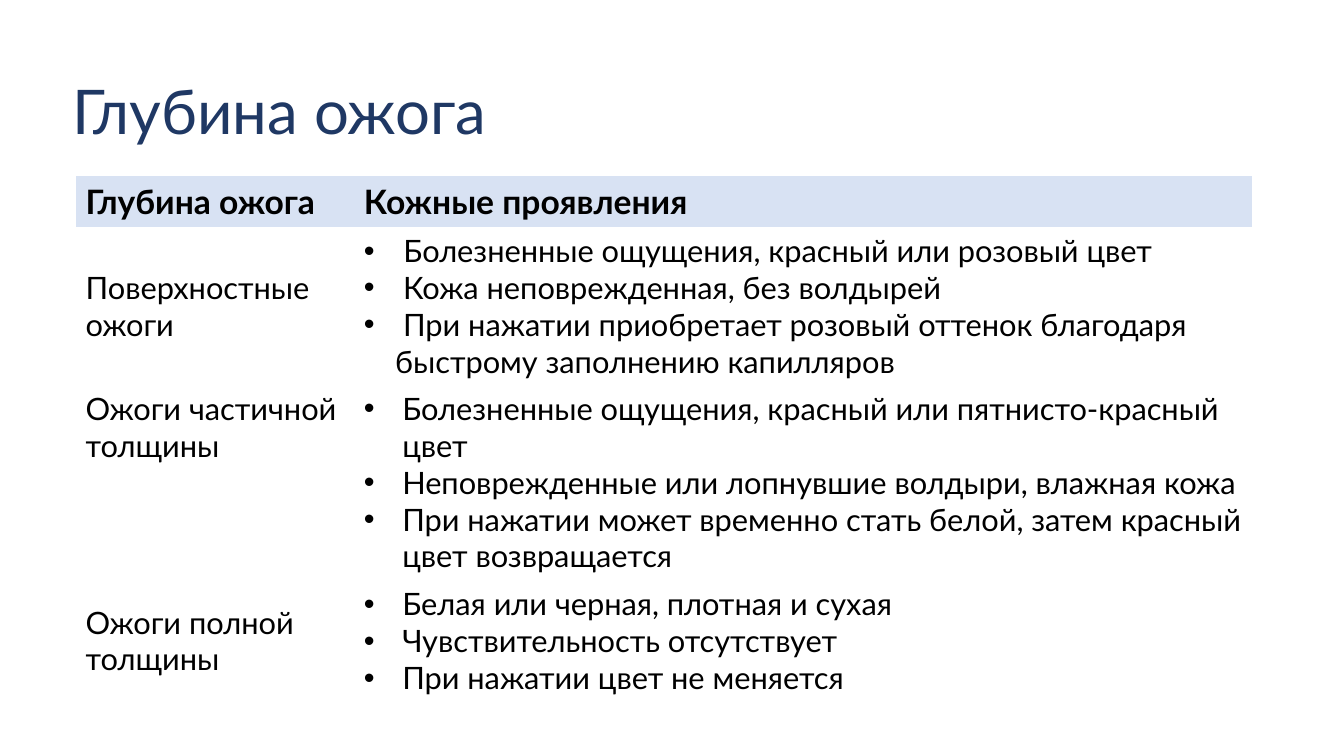
from lxml import etree
from pptx import Presentation
from pptx.dml.color import RGBColor
from pptx.enum.text import MSO_ANCHOR, PP_ALIGN
from pptx.oxml.ns import qn
from pptx.util import Inches, Pt

NAVY = RGBColor(0x1F, 0x38, 0x64)
BLACK = RGBColor(0x00, 0x00, 0x00)
PALE_BLUE = RGBColor(0xD8, 0xE2, 0xF3)
TOP, MIDDLE = MSO_ANCHOR.TOP, MSO_ANCHOR.MIDDLE
LEFT = PP_ALIGN.LEFT
FONT = "Lato"
NO_STYLE = "{2D5ABB26-0587-4C30-8999-92F81FD0307C}"

HEADERS = ["Глубина ожога", "Кожные проявления"]
BURNS = [
    ("Поверхностные ожоги", MIDDLE, [
        ("Болезненные ощущения, красный или розовый цвет", 0.39),
        (" Кожа неповрежденная, без волдырей", 0.31),
        (" При нажатии приобретает розовый оттенок благодаря быстрому заполнению капилляров", 0.31),
    ]),
    ("Ожоги частичной толщины", TOP, [
        ("Болезненные ощущения, красный или пятнисто-красный цвет", 0.38),
        ("Неповрежденные или лопнувшие волдыри, влажная кожа ", 0.38),
        ("При нажатии может временно стать белой, затем красный цвет возвращается", 0.38),
    ]),
    ("Ожоги полной толщины", MIDDLE, [
        ("Белая или черная, плотная и сухая", 0.38),
        ("Чувствительность отсутствует", 0.38),
        ("При нажатии цвет не меняется", 0.38),
    ]),
]


def write(p, text, size=22, color=BLACK, bold=False, indent=None):
    p.alignment = LEFT
    if indent:
        pPr = p._p.get_or_add_pPr()
        pPr.set("marL", str(Inches(indent)))
        pPr.set("indent", str(-Inches(indent)))
        etree.SubElement(pPr, qn("a:buFont")).set("typeface", "Arial")
        etree.SubElement(pPr, qn("a:buChar")).set("char", "•")
    r = p.add_run()
    r.text = text
    r.font.name = FONT
    r.font.size = Pt(size)
    r.font.bold = bold
    r.font.color.rgb = color


prs = Presentation()
prs.slide_width, prs.slide_height = Inches(13.33), Inches(7.5)
s = prs.slides.add_slide(prs.slide_layouts[5])

title = s.shapes.title
title.left, title.top = Inches(0.62), Inches(0.41)
title.width, title.height = Inches(11.5), Inches(1.45)
tf = title.text_frame
tf.vertical_anchor = MIDDLE
tf.paragraphs[0].line_spacing = 0.9
write(tf.paragraphs[0], "Глубина ожога", size=44, color=NAVY)

frame = s.shapes.add_table(4, 2, Inches(0.75), Inches(1.75), Inches(11.67), Inches(3.8))
table = frame.table
table.horz_banding = False
table._tbl.tblPr.find(qn("a:tableStyleId")).text = NO_STYLE
for col, width in zip(table.columns, [2.76, 8.91]):
    col.width = Inches(width)
for row, height in zip(table.rows, [0.38, 0.99, 1.22, 1.21]):
    row.height = Inches(height)

for col, header in enumerate(HEADERS):
    cell = table.cell(0, col)
    cell.fill.solid()
    cell.fill.fore_color.rgb = PALE_BLUE
    cell.vertical_anchor = MIDDLE
    write(cell.text_frame.paragraphs[0], header, size=24, bold=True)

for row, (burn, anchor, signs) in enumerate(BURNS, start=1):
    name_cell, signs_cell = table.cell(row, 0), table.cell(row, 1)
    for cell in (name_cell, signs_cell):
        cell.fill.background()
        cell.vertical_anchor = anchor
    write(name_cell.text_frame.paragraphs[0], burn)
    tf = signs_cell.text_frame
    for i, (sign, indent) in enumerate(signs):
        p = tf.add_paragraph() if i else tf.paragraphs[0]
        write(p, sign, indent=indent)

prs.save("out.pptx")
